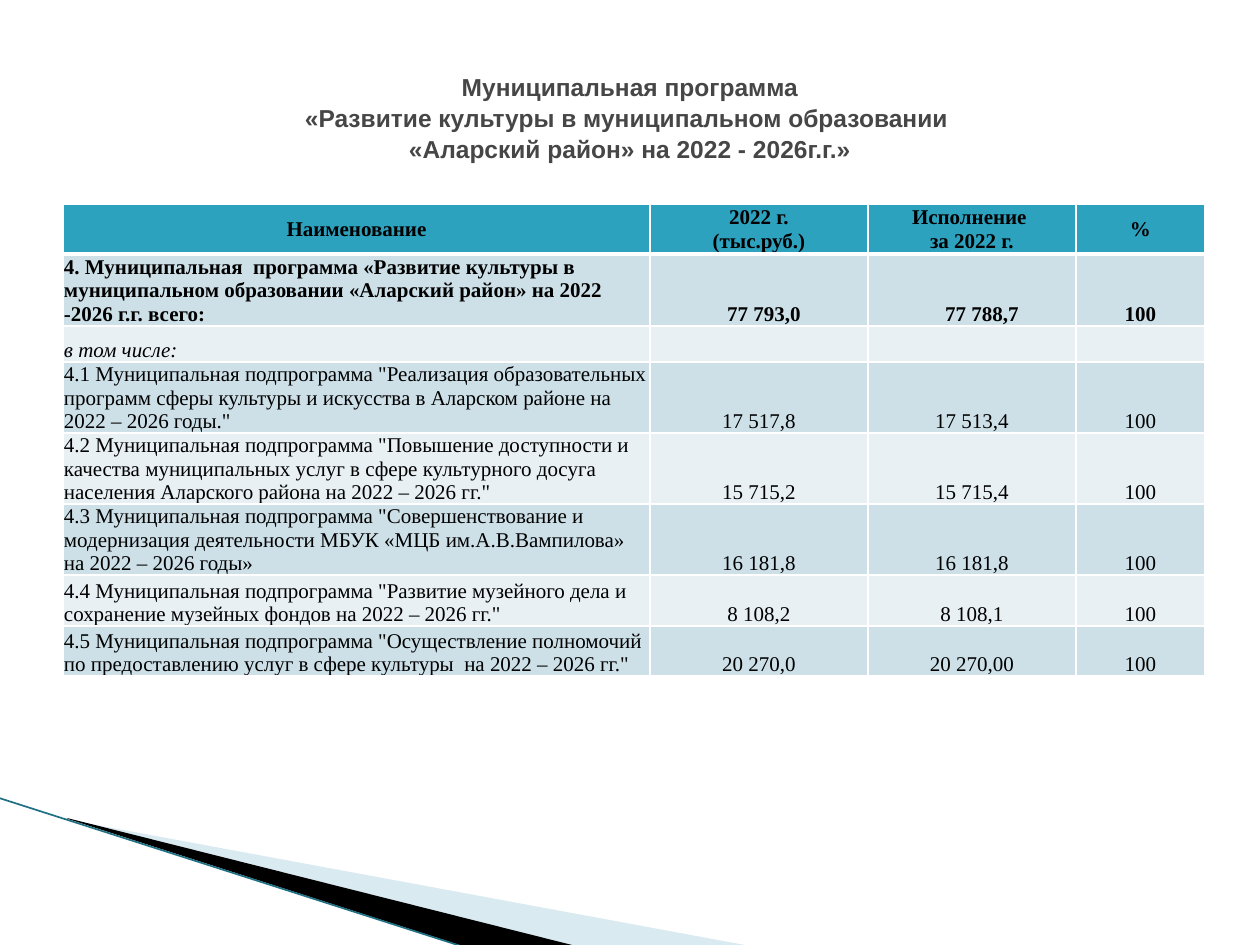
from lxml.etree import SubElement
from pptx import Presentation
from pptx.dml.color import RGBColor
from pptx.enum.shapes import MSO_CONNECTOR
from pptx.enum.text import MSO_ANCHOR as ANCHOR, PP_ALIGN as ALIGN
from pptx.oxml.ns import qn
from pptx.util import Pt

PX = 914400 / 126
COLORS = {
    "title": "464646", "text": "000000", "header": "2DA2BF",
    "band": "CDE0E8", "pale": "E8F0F4", "border": "FFFFFF",
    "wedge": "A0CBDC", "shade": "000000", "edge": "1F7082",
}


def px(length):
    return round(length * PX)


def write(frame, text, size=12, font="Times New Roman", color="text",
          bold=False, italic=False, align=ALIGN.CENTER, spacing=1.0):
    """Put each line of the text in its own formatted paragraph."""
    for i, line in enumerate(text.split("\n")):
        paragraph = frame.add_paragraph() if i else frame.paragraphs[0]
        paragraph.alignment = align
        paragraph.line_spacing = spacing
        run = paragraph.add_run()
        run.text = line
        run.font.size = Pt(size)
        run.font.name = font
        run.font.bold = bold
        run.font.italic = italic
        run.font.color.rgb = RGBColor.from_string(COLORS[color])


prs = Presentation()
prs.slide_width, prs.slide_height = px(1260), px(945)
slide = prs.slides.add_slide(prs.slide_layouts[5])
shapes = slide.shapes

# Corner decoration
wedges = [
    ("wedge", 40, [(69, 820), (750, 946), (575, 946), (69, 819)]),
    ("shade", 100, [(67, 818), (576, 946), (469, 948), (68, 819)]),
]
for color, opacity, points in wedges:
    builder = shapes.build_freeform(*points[0], scale=PX)
    builder.add_line_segments(points[1:], close=True)
    wedge = builder.convert_to_shape()
    wedge.shadow.inherit = False
    wedge.line.fill.background()
    wedge.fill.solid()
    wedge.fill.fore_color.rgb = RGBColor.from_string(COLORS[color])
    if opacity < 100:
        fill_color = wedge.fill._xPr.find(qn("a:solidFill"))[0]
        SubElement(fill_color, qn("a:alpha"), val=str(opacity * 1000))

edge = shapes.add_connector(MSO_CONNECTOR.STRAIGHT, px(-1), px(798), px(467), px(948))
edge.line.color.rgb = RGBColor.from_string(COLORS["edge"])
edge.line.width = Pt(0.95)
SubElement(edge._element.spPr, qn("a:effectLst"))

# Title
title = shapes.title
title.left, title.top, title.width, title.height = px(63), px(38), px(1134), px(158)
title.text_frame.vertical_anchor = ANCHOR.MIDDLE
write(title.text_frame,
      "Муниципальная программа\n"
      "«Развитие культуры в муниципальном образовании \n"
      "«Аларский район» на 2022 - 2026г.г.»",
      size=14, font="Arial", color="title", bold=True, spacing=1.05)

# Programme spending
rows = [
    ("Наименование", "2022 г.\n(тыс.руб.)", "Исполнение \nза 2022 г.", "%"),
    ("4. Муниципальная  программа «Развитие культуры в муниципальном образовании "
     "«Аларский район» на 2022 -2026 г.г. всего:", "77 793,0", "77 788,7", "100"),
    ("в том числе:", "", "", ""),
    ('4.1 Муниципальная подпрограмма "Реализация образовательных программ сферы '
     'культуры и искусства в Аларском районе на 2022 – 2026 годы."',
     "17 517,8", "17 513,4", "100"),
    ('4.2 Муниципальная подпрограмма "Повышение доступности и качества муниципальных '
     'услуг в сфере культурного досуга населения Аларского района на 2022 – 2026 гг."',
     "15 715,2", "15 715,4", "100"),
    ('4.3 Муниципальная подпрограмма "Совершенствование и модернизация деятельности '
     'МБУК «МЦБ им.А.В.Вампилова» на 2022 – 2026 годы»',
     "16 181,8", "16 181,8", "100"),
    ('4.4 Муниципальная подпрограмма "Развитие музейного дела и сохранение музейных '
     'фондов на 2022 – 2026 гг."', "8 108,2", "8 108,1", "100"),
    ('4.5 Муниципальная подпрограмма "Осуществление полномочий по предоставлению '
     'услуг в сфере культуры  на 2022 – 2026 гг."', "20 270,0", "20 270,00", "100"),
]
column_widths = [587, 218, 208, 129]
row_heights = [50, 72, 31, 71, 71, 71, 51, 50]
HEADER, TOTAL, INCLUDING = 0, 1, 2
total_indents = {1: 11, 2: 21}

spending = shapes.add_table(len(rows), len(column_widths), px(63), px(204),
                            px(sum(column_widths)), px(sum(row_heights))).table
for column, width in zip(spending.columns, column_widths):
    column.width = px(width)

for r, (values, height) in enumerate(zip(rows, row_heights)):
    spending.rows[r].height = px(height)
    for c, value in enumerate(values):
        cell = spending.cell(r, c)
        cell.margin_left = px(total_indents.get(c, 1) if r == TOTAL else 1)
        cell.margin_right = cell.margin_top = px(1)
        cell.margin_bottom = 0
        cell.vertical_anchor = ANCHOR.MIDDLE if r == HEADER else ANCHOR.BOTTOM
        write(cell.text_frame, value, bold=r in (HEADER, TOTAL), italic=r == INCLUDING,
              align=ALIGN.LEFT if c == 0 and r != HEADER else ALIGN.CENTER)

        thick_side = {HEADER: "lnB", TOTAL: "lnT"}.get(r)
        for side in ("lnL", "lnR", "lnT", "lnB"):
            width = Pt(3 if side == thick_side else 1)
            border = SubElement(cell._tc.get_or_add_tcPr(), qn(f"a:{side}"), w=str(width))
            SubElement(SubElement(border, qn("a:solidFill")), qn("a:srgbClr"),
                       val=COLORS["border"])
        cell.fill.solid()
        fill = "header" if r == HEADER else "band" if r % 2 else "pale"
        cell.fill.fore_color.rgb = RGBColor.from_string(COLORS[fill])

prs.save("out.pptx")
